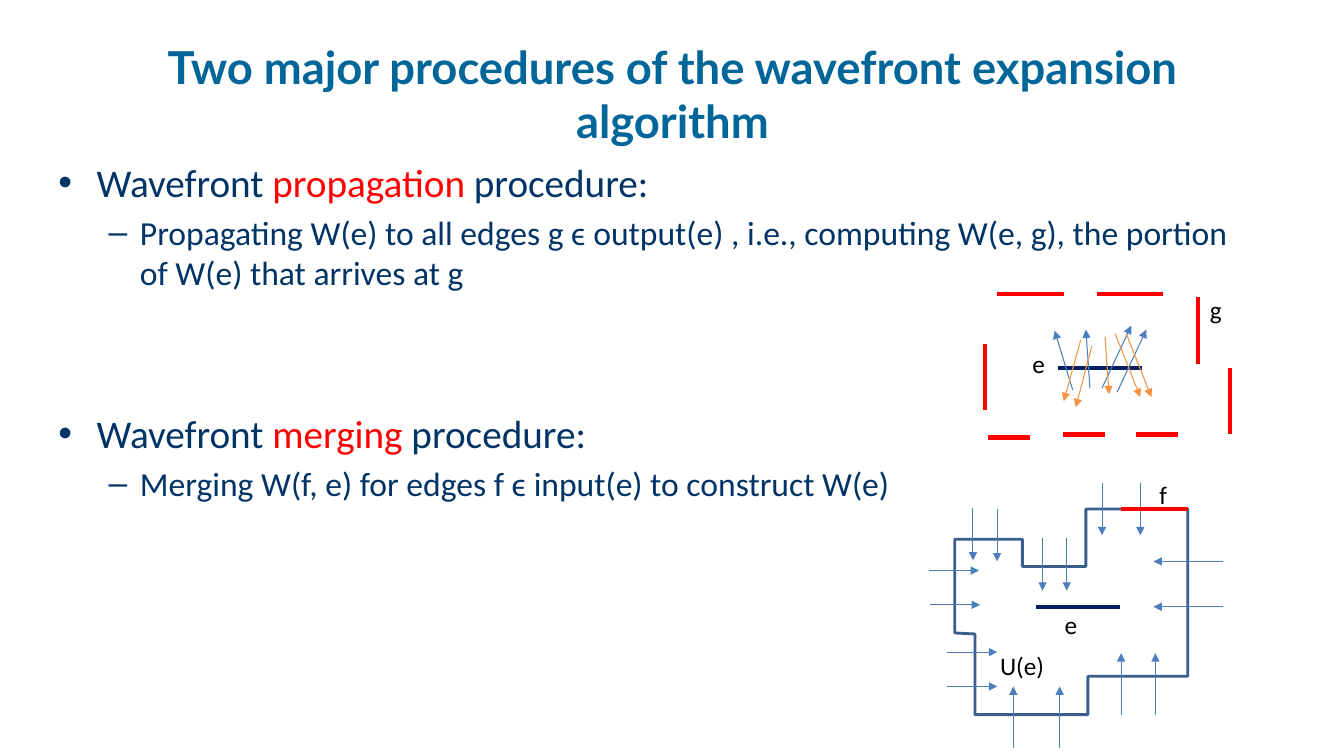
from dataclasses import dataclass

from lxml.etree import SubElement
from pptx import Presentation
from pptx.dml.color import RGBColor
from pptx.enum.shapes import MSO_CONNECTOR
from pptx.enum.text import MSO_ANCHOR, PP_ALIGN
from pptx.oxml.ns import qn
from pptx.util import Inches, Pt


@dataclass(frozen=True)
class Theme:
    title: str = "006699"
    text: str = "003366"
    red: str = "FF0000"
    navy: str = "002060"
    blue: str = "4B7EBC"
    orange: str = "F69240"
    wall: str = "3A5F8C"
    black: str = "000000"
    head_font: str = "Lato"
    font: str = "Calibri"
    head_size: float = 32.4
    item_size: float = 28
    sub_size: float = 24
    label_size: float = 18
    thick: float = 3
    thin: float = 0.75


THEME = Theme()

# Segments and arrows: x1, y1, x2, y2
OUTPUTS = [
    (9.89, 2.92, 10.55, 2.92), (10.88, 2.92, 11.53, 2.92),
    (11.88, 2.95, 11.88, 3.61), (12.2, 3.65, 12.2, 4.31),
    (9.77, 3.41, 9.77, 4.07), (9.8, 4.34, 10.22, 4.34),
    (10.54, 4.31, 10.96, 4.31), (11.27, 4.31, 11.68, 4.31),
]
RISING = [
    (10.64, 3.87, 10.46, 3.28), (11.08, 3.89, 11.37, 3.27),
    (10.93, 3.85, 11.22, 3.23), (10.81, 3.85, 10.77, 3.27),
]
FALLING = [
    (11.06, 3.31, 11.31, 3.94), (11.17, 3.31, 11.42, 3.94),
    (10.96, 3.34, 11, 3.91), (10.72, 3.37, 10.55, 3.98),
    (10.83, 3.43, 10.67, 4.04),
]
# Arrows into U(e): shared step (dx, dy), then the start points
INPUTS = [
    ((-0.69, 0), [(12.13, 5.57), (12.13, 6.02)]),
    ((0, -0.61), [(11.46, 7.09), (11.12, 7.09), (10.51, 7.42), (10.05, 7.42)]),
    ((0.5, 0), [(9.39, 6.81), (9.39, 6.47), (9.22, 6), (9.21, 5.66)]),
    ((0, 0.52), [(10.93, 4.79), (11.31, 4.79), (10.58, 5.34),
                 (10.34, 5.34), (9.89, 5.05), (9.65, 5.04)]),
]
REGION = [
    (9.47, 6.28), (9.47, 5.35), (10.14, 5.35), (10.14, 5.62),
    (10.77, 5.62), (10.77, 5.05), (11.78, 5.05), (11.78, 6.71),
    (10.79, 6.71), (10.79, 7.09), (9.67, 7.09), (9.67, 6.29),
]
LABELS = [
    ("e", 10.14, 3.41, 0.33), ("g", 11.9, 2.87, 0.32), ("e", 10.46, 6, 0.33),
    ("U(e)", 9.82, 6.4, 0.64), ("f", 11.4, 4.71, 0.28),
]


def paint(color):
    return RGBColor.from_string(color)


def add_run(para, text, size, color, font=THEME.font, bold=False):
    run = para.add_run()
    run.text = text
    run.font.size = Pt(size)
    run.font.name = font
    run.font.bold = bold
    run.font.color.rgb = paint(color)


def add_box(slide, left, top, width, height, wrap=True):
    box = slide.shapes.add_textbox(
        Inches(left), Inches(top), Inches(width), Inches(height))
    box.text_frame.word_wrap = wrap
    return box.text_frame


def add_title(slide, text):
    frame = add_box(slide, 0.67, 0.3, 12, 1.25)
    frame.vertical_anchor = MSO_ANCHOR.MIDDLE
    para = frame.paragraphs[0]
    para.alignment = PP_ALIGN.CENTER
    add_run(para, text, THEME.head_size, THEME.title, THEME.head_font, True)


def set_bullet(para, mark, margin, hang, before):
    para.space_before = Pt(before)
    props = para._p.get_or_add_pPr()
    props.set("marL", str(Inches(margin)))
    props.set("indent", str(-Inches(hang)))
    SubElement(props, qn("a:buFont")).set("typeface", "Arial")
    SubElement(props, qn("a:buChar")).set("char", mark)


def add_item(frame, para, key, detail, before):
    """Add a bullet with one red key word, and the detail below it."""
    set_bullet(para, "•", 0.38, 0.38, before)
    for text, color in (("Wavefront ", THEME.text), (key, THEME.red),
                        (" procedure:", THEME.text)):
        add_run(para, text, THEME.item_size, color)
    sub = frame.add_paragraph()
    sub.level = 1
    set_bullet(sub, "–", 0.81, 0.31, 4.5)
    add_run(sub, detail, THEME.sub_size, THEME.text)


def add_line(slide, ends, color, width, arrow=False):
    line = slide.shapes.add_connector(
        MSO_CONNECTOR.STRAIGHT, *[Inches(end) for end in ends])
    line.line.color.rgb = paint(color)
    line.line.width = Pt(width)
    if arrow:
        SubElement(line.line._get_or_add_ln(),
                   qn("a:tailEnd")).set("type", "triangle")
    SubElement(line._element.spPr, qn("a:effectLst"))


def add_region(slide):
    points = [(Inches(x), Inches(y)) for x, y in REGION]
    build = slide.shapes.build_freeform(*points[0])
    build.add_line_segments(points[1:], close=True)
    shape = build.convert_to_shape()
    shape.shadow.inherit = False
    shape.fill.background()
    shape.line.color.rgb = paint(THEME.wall)
    shape.line.width = Pt(2)


def add_label(slide, text, left, top, width):
    frame = add_box(slide, left, top, width, 0.4, wrap=False)
    add_run(frame.paragraphs[0], text, THEME.label_size, THEME.black)


def draw_outputs(slide):
    add_line(slide, (10.49, 3.65, 11.33, 3.65), THEME.navy, THEME.thick)
    for ends in OUTPUTS:
        add_line(slide, ends, THEME.red, THEME.thick)
    for arrows, color in ((RISING, THEME.blue), (FALLING, THEME.orange)):
        for ends in arrows:
            add_line(slide, ends, color, THEME.thin, arrow=True)


def draw_inputs(slide):
    add_region(slide)
    add_line(slide, (10.28, 6.02, 11.11, 6.02), THEME.navy, THEME.thick)
    for (dx, dy), starts in INPUTS:
        for x, y in starts:
            add_line(slide, (x, y, x + dx, y + dy),
                     THEME.blue, THEME.thin, arrow=True)
    add_line(slide, (11.12, 5.05, 11.78, 5.05), THEME.red, THEME.thick)


def main():
    deck = Presentation()
    deck.slide_width, deck.slide_height = Inches(13.33), Inches(7.5)
    slide = deck.slides.add_slide(deck.slide_layouts[6])
    add_title(slide, "Two major procedures of the wavefront expansion algorithm")
    body = add_box(slide, 0.48, 1.52, 11.84, 4.43)
    add_item(body, body.paragraphs[0], "propagation",
             "Propagating W(e) to all edges g ϵ output(e) , i.e., computing "
             "W(e, g), the portion of W(e) that arrives at g", 5.5)
    add_item(body, body.add_paragraph(), "merging",
             "Merging W(f, e) for edges f ϵ input(e) to construct W(e)", 84)
    draw_outputs(slide)
    draw_inputs(slide)
    for label in LABELS:
        add_label(slide, *label)
    deck.save("out.pptx")


if __name__ == "__main__":
    main()
